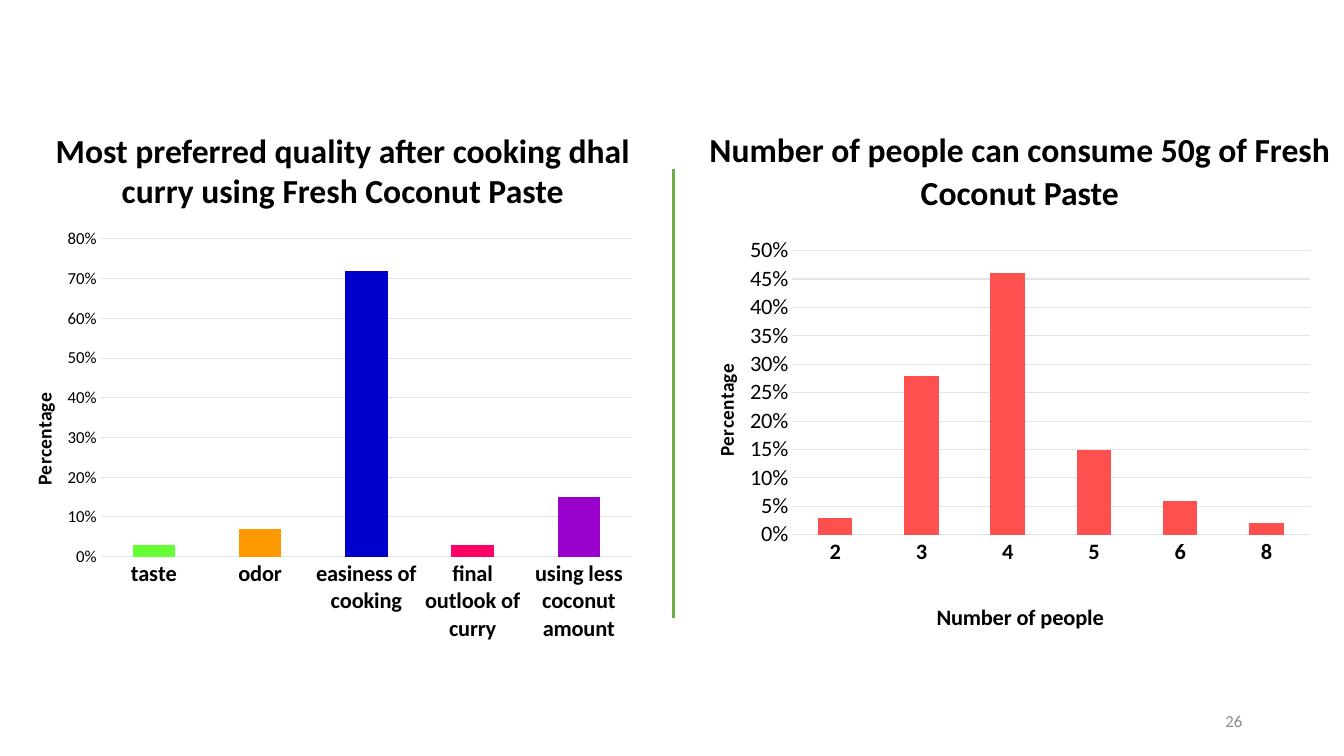
from lxml import etree
from pptx import Presentation
from pptx.chart.data import CategoryChartData
from pptx.dml.color import RGBColor
from pptx.enum.chart import XL_CHART_TYPE, XL_TICK_MARK
from pptx.enum.shapes import MSO_CONNECTOR
from pptx.enum.text import MSO_ANCHOR, MSO_AUTO_SIZE, PP_ALIGN
from pptx.oxml.ns import qn
from pptx.util import Pt

COLUMN = XL_CHART_TYPE.COLUMN_CLUSTERED
NO_TICK = XL_TICK_MARK.NONE
STRAIGHT = MSO_CONNECTOR.STRAIGHT
TOP, MIDDLE = MSO_ANCHOR.TOP, MSO_ANCHOR.MIDDLE
NO_FIT = MSO_AUTO_SIZE.NONE
CENTER, RIGHT = PP_ALIGN.CENTER, PP_ALIGN.RIGHT

EMU_PER_PX = 9144  # 100 px to the inch
TITLE_ONLY = 5


def px(n):
    return n * EMU_PER_PX


def rgb(value):
    return RGBColor.from_string(value)


def apply(target, values):
    for name, value in values.items():
        setattr(target, name, value)


def set_layout(element, index, inner=False, **fractions):
    """Pin a chart part at fractions of the chart's size."""
    layout = element.find(qn("c:layout"))
    if layout is None:
        layout = etree.Element(qn("c:layout"))
        element.insert(index, layout)
    manual = etree.SubElement(layout, qn("c:manualLayout"))
    values = {"layoutTarget": "inner"} if inner else {}
    values.update(xMode="edge", yMode="edge", **fractions)
    for tag, value in values.items():
        etree.SubElement(manual, qn("c:" + tag)).set("val", str(value))


class Deck:
    font = "Calibri"
    black, grid, gray, green = "000000", "E0E5EB", "8C8C8C", "70AD47"

    def __init__(self, prs):
        self.s = prs.slides.add_slide(prs.slide_layouts[TITLE_ONLY])

    def style(self, font, size, bold=False, color=black):
        apply(font, {"name": self.font, "size": Pt(size), "bold": bold})
        font.color.rgb = rgb(color)

    def text(self, text, box, size, bold=False, color=black, align=CENTER,
             anchor=MIDDLE, title=False, **spacing):
        left, top, width, height = map(px, box)
        if title:
            sp = self.s.shapes.title
            apply(sp, {"left": left, "top": top, "width": width, "height": height})
        else:
            sp = self.s.shapes.add_textbox(left, top, width, height)
        tf = sp.text_frame
        apply(tf, {"word_wrap": True, "auto_size": NO_FIT, "vertical_anchor": anchor})
        p = tf.paragraphs[0]
        apply(p, {"alignment": align, **spacing})
        r = p.add_run()
        r.text = text
        self.style(r.font, size, bold, color)

    def line(self, x1, y1, x2, y2, color, width):
        sp = self.s.shapes.add_connector(STRAIGHT, px(x1), px(y1), px(x2), px(y2))
        sp.line.color.rgb = rgb(color)
        sp.line.width = Pt(width)
        etree.SubElement(sp._element.spPr, qn("a:effectLst"))

    def axis_title(self, axis, text, size, x, y):
        tf = axis.axis_title.text_frame
        tf.text = text
        self.style(tf.paragraphs[0].runs[0].font, size, True)
        set_layout(axis.axis_title._element, 1, x=x, y=y)

    def hairline(self, line):
        line.color.rgb = rgb(self.grid)
        line.width = Pt(0.75)

    def column_chart(self, box, values, colors, top, step, value_size, plot):
        data = CategoryChartData(number_format="0%")
        data.categories = list(values)
        data.add_series("Series 1", list(values.values()))
        chart = self.s.shapes.add_chart(COLUMN, *map(px, box), data).chart
        apply(chart, {"has_legend": False, "has_title": False})
        self.style(chart.font, 10)
        set_layout(chart._chartSpace.chart.plotArea, 0, inner=True, **plot)

        # Columns
        bars = chart.plots[0]
        apply(bars, {"gap_width": 150, "vary_by_categories": False})
        series = bars.series[0]
        series.format.fill.solid()
        series.format.fill.fore_color.rgb = rgb(colors[0])
        if len(colors) > 1:
            for i, color in enumerate(colors):
                fill = series.points[i].format.fill
                fill.solid()
                fill.fore_color.rgb = rgb(color)

        # Axes
        cat, val = chart.category_axis, chart.value_axis
        for axis, size, bold in ((cat, 16, True), (val, value_size, False)):
            apply(axis, {"major_tick_mark": NO_TICK, "minor_tick_mark": NO_TICK})
            self.style(axis.tick_labels.font, size, bold)
        apply(val, {"minimum_scale": 0, "maximum_scale": top, "major_unit": step})
        apply(val.tick_labels, {"number_format": "0%", "number_format_is_linked": False})
        val.format.line.fill.background()
        self.hairline(cat.format.line)
        self.hairline(val.major_gridlines.format.line)
        return chart


def main():
    prs = Presentation()
    apply(prs, {"slide_width": px(1333), "slide_height": px(750)})
    deck = Deck(prs)

    # Slide number
    deck.text("26", (942, 695, 300, 40), 12, color=deck.gray, align=RIGHT)

    # Left half: preferred quality
    deck.text("Most preferred quality after cooking dhal curry using Fresh Coconut Paste",
              (41, 141, 598, 55), 24, bold=True, title=True)
    quality = {"taste": 0.03, "odor": 0.07, "easiness of cooking": 0.72,
               "final outlook of curry": 0.03, "using less coconut amount": 0.15}
    chart = deck.column_chart(
        (1, 219, 638, 428), quality,
        ["66FF33", "FF9900", "0000CC", "FF0066", "9900CC"], 0.8, 0.1, 12,
        {"x": 0.155, "y": 0.042, "w": 0.826, "h": 0.737})
    deck.axis_title(chart.value_axis, "Percentage", 14, 0.04, 0.39)

    # Divider
    deck.line(668, 168, 668, 613, deck.green, 2.25)

    # Right half: people served
    deck.text("Number of people can consume 50g of Fresh Coconut Paste",
              (678, 120, 667, 97), 24, bold=True, anchor=TOP,
              line_spacing=1.07, space_after=Pt(8))
    people = {"2": 0.03, "3": 0.28, "4": 0.46, "5": 0.15, "6": 0.06, "8": 0.02}
    chart = deck.column_chart(
        (678, 228, 633, 405), people, ["FF5050"], 0.5, 0.05, 16,
        {"x": 0.17, "y": 0.052, "w": 0.811, "h": 0.71})
    deck.axis_title(chart.value_axis, "Percentage", 14, 0.04, 0.33)
    deck.axis_title(chart.category_axis, "Number of people", 16, 0.39, 0.92)

    prs.save("out.pptx")


if __name__ == "__main__":
    main()
